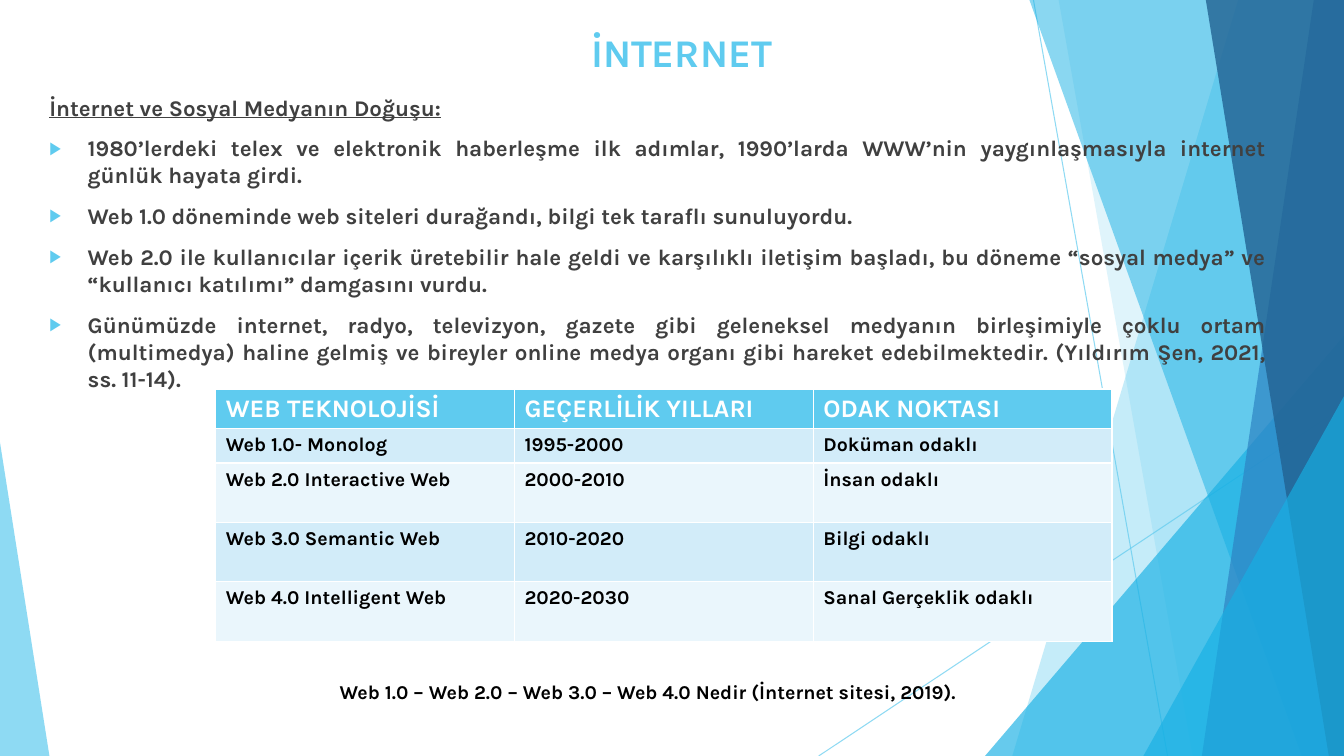
from lxml.etree import SubElement
from pptx import Presentation
from pptx.dml.color import RGBColor
from pptx.enum.shapes import MSO_CONNECTOR, MSO_SHAPE
from pptx.enum.text import MSO_ANCHOR, MSO_AUTO_SIZE, PP_ALIGN
from pptx.oxml.ns import qn
from pptx.util import Inches, Pt

WIDTH, HEIGHT = 13.33, 7.5
FONT = "Karla"
SKY, AZURE, BLUE, NAVY = "5FCBEF", "17B0E4", "2E83C3", "226292"
WHITE, BLACK, GREY = "FFFFFF", "000000", "404040"
BANDS = ["EAF6FC", "D2ECF9"]

RAYS = [((10.25, 0), (11.58, HEIGHT)), ((WIDTH, 4.03), (8.12, HEIGHT))]
BACK_PANELS = [(12.28, 10.04, SKY, 36), (10.5, 11.83, SKY, 20)]
FRONT_PANELS = [(10.21, 12.91, AZURE, 50), (13.03, 11.92, BLUE, 70),
                (11.96, 13.18, NAVY, 80)]
HEADING = "İnternet ve Sosyal Medyanın Doğuşu:"
BULLETS = [
    "1980’lerdeki telex ve elektronik haberleşme ilk adımlar, 1990’larda "
    "WWW’nin yaygınlaşmasıyla internet günlük hayata girdi.",
    "Web 1.0 döneminde web siteleri durağandı, bilgi tek taraflı sunuluyordu.",
    "Web 2.0 ile kullanıcılar içerik üretebilir hale geldi ve karşılıklı "
    "iletişim başladı, bu döneme “sosyal medya” ve “kullanıcı katılımı” "
    "damgasını vurdu.",
    "Günümüzde internet, radyo, televizyon, gazete gibi geleneksel medyanın "
    "birleşimiyle çoklu ortam (multimedya) haline gelmiş ve bireyler online "
    "medya organı gibi hareket edebilmektedir. (Yıldırım Şen, 2021, ss. 11-14).",
]
WEB_ERAS = [
    ("WEB TEKNOLOJİSİ", "GEÇERLİLİK YILLARI", "ODAK NOKTASI"),
    ("Web 1.0- Monolog", "1995-2000", "Doküman odaklı"),
    ("Web 2.0 Interactive Web", "2000-2010", "İnsan odaklı"),
    ("Web 3.0 Semantic Web", "2010-2020", "Bilgi odaklı"),
    ("Web 4.0 Intelligent Web", "2020-2030", "Sanal Gerçeklik odaklı"),
]
ROW_HEIGHTS = [0.34, 0.34, 0.59, 0.59, 0.59]
CAPTION = "Web 1.0 – Web 2.0 – Web 3.0 – Web 4.0 Nedir (İnternet sitesi, 2019)."


def rgb(value):
    """Turn a hex string into a colour."""
    return RGBColor.from_string(value)


def set_alpha(sp, percent):
    """Make the explicit colours of a shape translucent."""
    for color in sp._element.iter(qn("a:srgbClr")):
        SubElement(color, qn("a:alpha"), val=str(percent * 1000))


class SlideBuilder:
    """Hold the style and the current slide."""

    def __init__(self, prs):
        """Add a title and content slide."""
        self.slide = prs.slides.add_slide(prs.slide_layouts[1])
        self.shapes = self.slide.shapes

    def format(self, p, size, color, underline=False):
        """Format the runs of a paragraph."""
        for r in p.runs:
            r.font.name, r.font.size, r.font.bold = FONT, Pt(size), True
            r.font.underline = underline
            r.font.color.rgb = rgb(color)

    def paint(self, sp, color, alpha):
        """Give a shape a translucent fill without line or shadow."""
        sp.shadow.inherit = False
        sp.fill.solid()
        sp.fill.fore_color.rgb = rgb(color)
        sp.line.fill.background()
        set_alpha(sp, alpha)

    def ray(self, start, end):
        """Draw a thin translucent line."""
        line = self.shapes.add_connector(
            MSO_CONNECTOR.STRAIGHT, *map(Inches, start + end))
        line.line.color.rgb = rgb(SKY)
        line.line.width = Pt(0.75)
        SubElement(line._element.spPr, qn("a:effectLst"))
        set_alpha(line, 70)

    def panel(self, top_x, bottom_x, color, alpha):
        """Fill the area from a slanted edge to the right slide edge."""
        fb = self.shapes.build_freeform(Inches(top_x), 0)
        corners = [(WIDTH, 0), (WIDTH, HEIGHT), (bottom_x, HEIGHT)]
        fb.add_line_segments([(Inches(x), Inches(y)) for x, y in corners])
        self.paint(fb.convert_to_shape(), color, alpha)

    def triangle(self, left, top, width, apex, color, alpha):
        """Draw a triangle that stands on the bottom slide edge."""
        sp = self.shapes.add_shape(
            MSO_SHAPE.ISOSCELES_TRIANGLE,
            *map(Inches, (left, top, width, HEIGHT - top)))
        sp.adjustments[0] = apex
        self.paint(sp, color, alpha)

    def place(self, sp, left, top, width, height):
        """Move a placeholder and bring it to the front."""
        sp.left, sp.top = Inches(left), Inches(top)
        sp.width, sp.height = Inches(width), Inches(height)
        sp._element.getparent().append(sp._element)
        tf = sp.text_frame
        tf.auto_size = MSO_AUTO_SIZE.NONE
        tf.vertical_anchor = MSO_ANCHOR.TOP
        return tf

    def title(self, text, *box):
        """Fill the title placeholder."""
        tf = self.place(self.shapes.title, *box)
        tf.text = text
        p = tf.paragraphs[0]
        p.alignment = PP_ALIGN.CENTER
        self.format(p, 28, SKY)

    def body(self, heading, bullets, *box):
        """Fill the body placeholder with a heading and a list."""
        tf = self.place(self.slide.placeholders[1], *box)
        tf.text = "\n".join([heading, *bullets])
        for i, p in enumerate(tf.paragraphs):
            p.alignment = PP_ALIGN.JUSTIFY
            p.space_before = Pt(10)
            self.format(p, 16, GREY, underline=i == 0)
            self.bullet(p, i > 0)

    def bullet(self, p, shown):
        """Set the indent and the marker of a paragraph."""
        pPr = p._p.get_or_add_pPr()
        indent = Inches(0.38) if shown else 0
        pPr.set("marL", str(indent))
        pPr.set("indent", str(-indent))
        if not shown:
            SubElement(pPr, qn("a:buNone"))
            return
        SubElement(SubElement(pPr, qn("a:buClr")), qn("a:srgbClr"), val=SKY)
        SubElement(pPr, qn("a:buSzPct"), val="80000")
        SubElement(pPr, qn("a:buChar"), char="▶")

    def table(self, rows, heights, left, top, width):
        """Add a table with a header row and banded rows."""
        table = self.shapes.add_table(
            len(rows), len(rows[0]),
            *map(Inches, (left, top, width, sum(heights)))).table
        for i, (row, height) in enumerate(zip(rows, heights)):
            table.rows[i].height = Inches(height)
            for j, text in enumerate(row):
                cell = table.cell(i, j)
                cell.text = text
                cell.fill.solid()
                cell.fill.fore_color.rgb = rgb(BANDS[i % 2] if i else SKY)
                size, color = (14, BLACK) if i else (18, WHITE)
                self.format(cell.text_frame.paragraphs[0], size, color)

    def caption(self, text, *box):
        """Add a text box with one line."""
        tf = self.shapes.add_textbox(*map(Inches, box)).text_frame
        tf.word_wrap = True
        tf.auto_size = MSO_AUTO_SIZE.SHAPE_TO_FIT_TEXT
        tf.text = text
        self.format(tf.paragraphs[0], 14, BLACK)


def main():
    """Build the slide and save it."""
    prs = Presentation()
    prs.slide_width, prs.slide_height = Inches(WIDTH), Inches(HEIGHT)
    s = SlideBuilder(prs)
    for start, end in RAYS:
        s.ray(start, end)
    for panel in BACK_PANELS:
        s.panel(*panel)
    s.triangle(9.77, 3.33, 3.56, 1, AZURE, 66)
    for panel in FRONT_PANELS:
        s.panel(*panel)
    s.triangle(11.34, 3.93, 1.99, 1, AZURE, 66)
    s.triangle(0, 4.39, 0.49, 0, SKY, 70)
    s.title("İNTERNET", 0.78, 0.23, 11.96, 0.7)
    s.body(HEADING, BULLETS, 0.39, 0.88, 12.27, 6.29)
    s.table(WEB_ERAS, ROW_HEIGHTS, 2.14, 3.86, 8.89)
    s.caption(CAPTION, 3.27, 6.7, 6.52, 0.34)
    prs.save("out.pptx")


if __name__ == "__main__":
    main()
